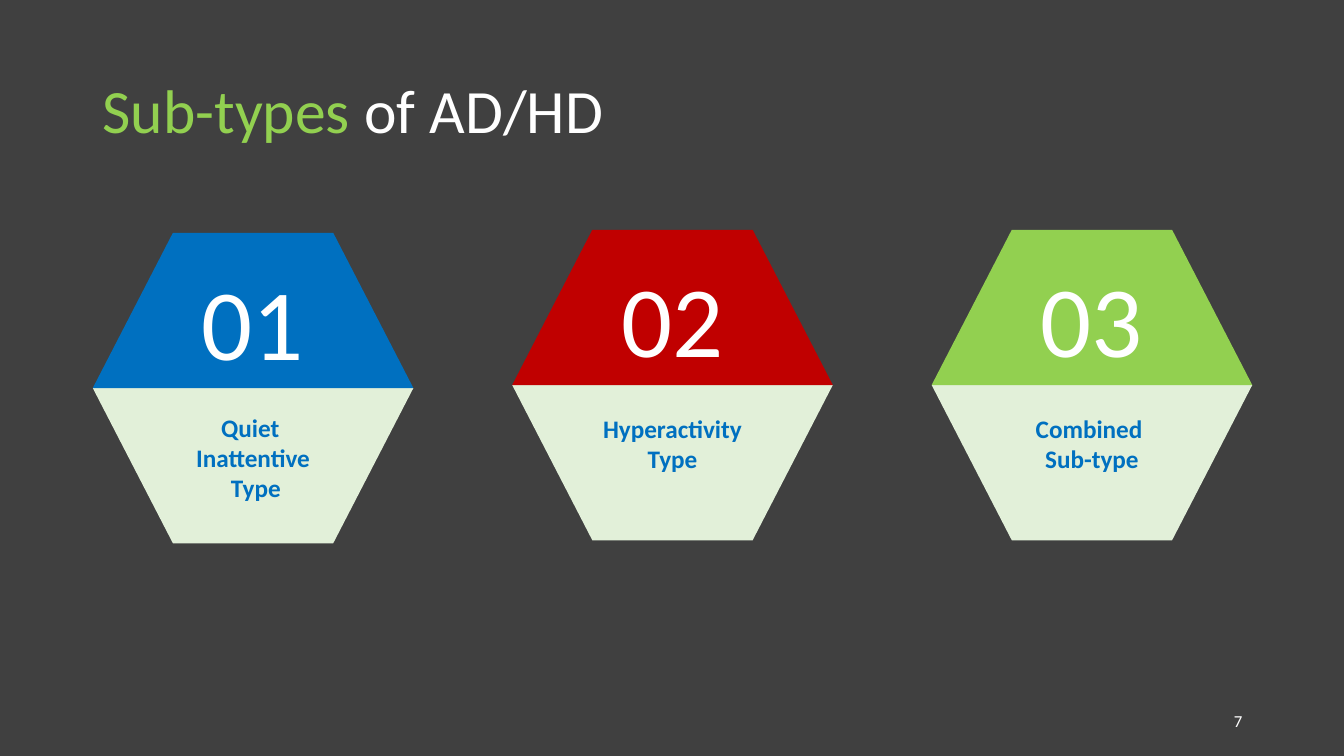
import pptx
import pptx.util
import pptx.dml.color
import pptx.enum.text

Inches = pptx.util.Inches
ALIGN = pptx.enum.text.PP_ALIGN
ANCHOR = pptx.enum.text.MSO_ANCHOR

# Content
COLORS = {"back": "404040", "white": "FFFFFF", "blue": "0070C0",
          "red": "C00000", "green": "92D050", "pale": "E2F0D9"}
TITLE = [("Sub-types", "green"), (" of AD/HD", "white")]
PAGE = "7"
# number, colour, label lines, top of hexagon, top of label
SUBTYPES = [
    ("01", "blue", ["Quiet ", "Inattentive", " Type"], 2.31, 4.04),
    ("02", "red", ["Hyperactivity", "Type"], 2.28, 4.05),
    ("03", "green", ["Combined ", "Sub-type"], 2.28, 4.05),
]

# Grid, in inches
WIDTH, HEIGHT = 13.33, 7.5
LEFT, STEP = 0.92, 4.16
HEX_W, HALF_H = 3.18, 1.54
NUM_W, NUM_H = 1.48, 1.44
LABEL_W, LABEL_H = 1.82, 1.19
FONT = "Calibri"

prs = pptx.Presentation()
prs.slide_width, prs.slide_height = Inches(WIDTH), Inches(HEIGHT)
slide = prs.slides.add_slide(prs.slide_layouts[6])


def rgb(name):
    return pptx.dml.color.RGBColor.from_string(COLORS[name])


def add_text(box, paragraphs, size, align, anchor=ANCHOR.TOP, bold=False,
             wrap=True, spacing=None):
    """Each paragraph is a list of (text, colour) runs."""
    sp = slide.shapes.add_textbox(*map(Inches, box))
    tf = sp.text_frame
    tf.word_wrap = wrap
    tf.vertical_anchor = anchor
    for i, runs in enumerate(paragraphs):
        p = tf.paragraphs[0] if i == 0 else tf.add_paragraph()
        p.alignment = align
        p.line_spacing = spacing
        for text, color in runs:
            r = p.add_run()
            r.text = text
            r.font.name = FONT
            r.font.size = pptx.util.Pt(size)
            r.font.bold = bold
            r.font.color.rgb = rgb(color)


def add_half(x, middle, edge, color):
    """Half a hexagon between its middle line and its short outer edge."""
    points = [(x, middle), (x + HEX_W, middle),
              (x + HEX_W * 3 / 4, edge), (x + HEX_W / 4, edge)]
    points = [(Inches(a), Inches(b)) for a, b in points]
    builder = slide.shapes.build_freeform(*points[0])
    builder.add_line_segments(points[1:], close=True)
    sp = builder.convert_to_shape()
    sp.shadow.inherit = False
    sp.fill.solid()
    sp.fill.fore_color.rgb = rgb(color)
    sp.line.fill.background()


# Background, page number and title
slide.background.fill.solid()
slide.background.fill.fore_color.rgb = rgb("back")
add_text((9.42, 6.95, 3, 0.4), [[(PAGE, "white")]], 12, ALIGN.RIGHT, ANCHOR.MIDDLE)
add_text((LEFT, 0.4, 11.5, 1.45), [TITLE], 44, ALIGN.LEFT, ANCHOR.MIDDLE, spacing=0.9)

# Hexagons with number and label
for i, (number, color, lines, top, label_top) in enumerate(SUBTYPES):
    x = LEFT + i * STEP
    center = x + HEX_W / 2
    middle = top + HALF_H
    add_half(x, middle, middle + HALF_H, "pale")
    add_half(x, middle, top, color)
    add_text((center - NUM_W / 2, top + 0.22, NUM_W, NUM_H),
             [[(number, "white")]], 72, ALIGN.CENTER, wrap=False)
    add_text((center - LABEL_W / 2, label_top, LABEL_W, LABEL_H),
             [[(line, "blue")] for line in lines], 18, ALIGN.CENTER, bold=True)

prs.save("out.pptx")
